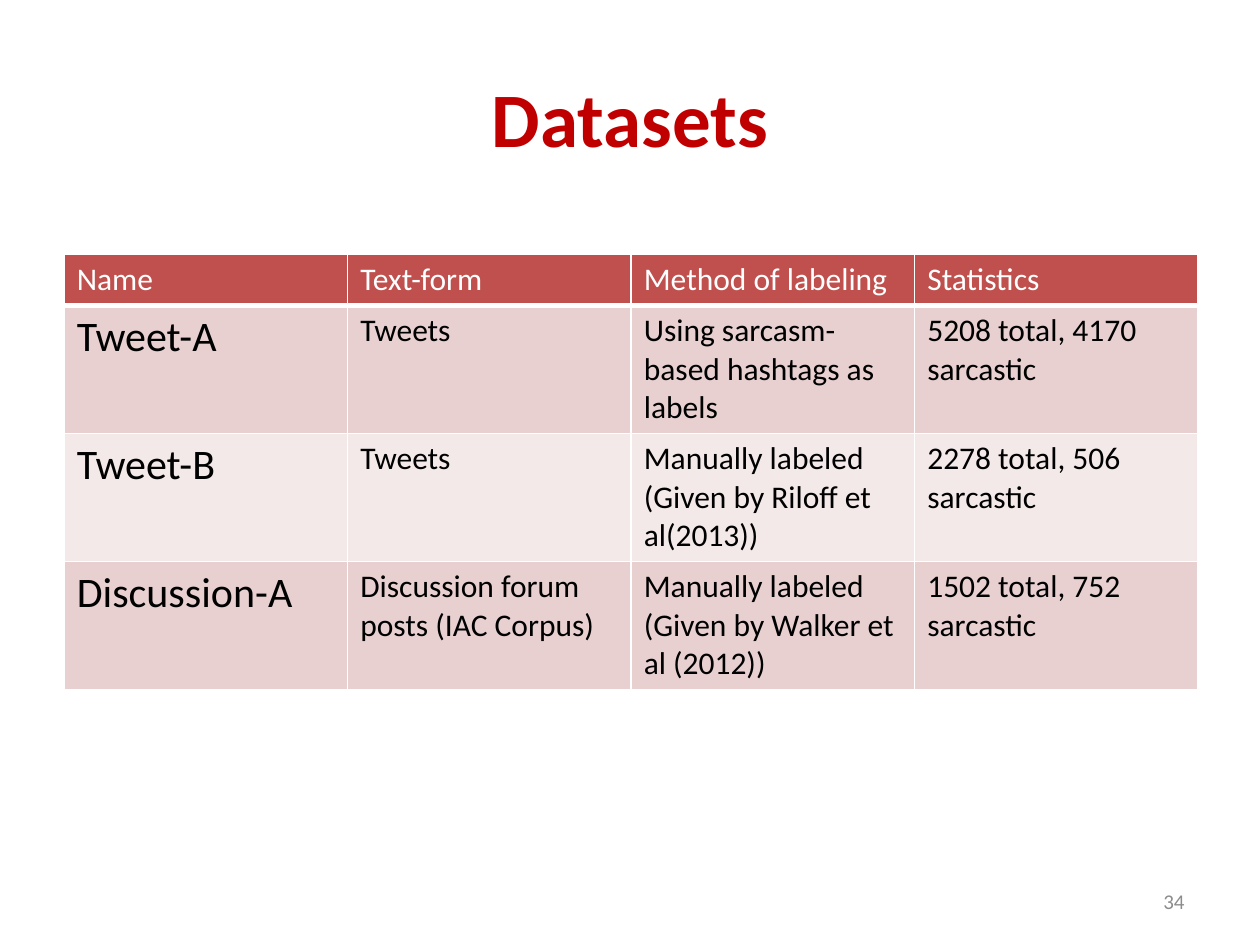
"""Builds the Datasets slide: a title, a table of corpora and the page number."""
from dataclasses import dataclass

from lxml import etree
from pptx import Presentation
from pptx.dml.color import RGBColor
from pptx.enum.text import MSO_ANCHOR, PP_ALIGN
from pptx.oxml.ns import qn
from pptx.util import Pt

LEFT, CENTER, RIGHT = PP_ALIGN.LEFT, PP_ALIGN.CENTER, PP_ALIGN.RIGHT
MIDDLE = MSO_ANCHOR.MIDDLE


@dataclass(frozen=True)
class Theme:
    font: str = "Calibri"
    title: str = "C00000"
    header: str = "C0504D"
    bands: tuple[str, str] = ("E8D0D0", "F4E9E9")
    white: str = "FFFFFF"
    black: str = "000000"
    grey: str = "8C8C8C"
    title_size: float = 44
    name_size: float = 24
    body_size: float = 18
    number_size: float = 12
    border: float = 1
    header_rule: float = 3


@dataclass(frozen=True)
class Box:
    left: float
    top: float
    width: float
    height: float

    def lengths(self) -> list:
        return [Pt(v) for v in (self.left, self.top, self.width, self.height)]


@dataclass(frozen=True)
class Dataset:
    name: str
    form: str
    labeling: str
    statistics: str

    def texts(self) -> tuple[str, ...]:
        return self.name, self.form, self.labeling, self.statistics


THEME = Theme()
HEADINGS = ("Name", "Text-form", "Method of labeling", "Statistics")
DATASETS = (
    Dataset("Tweet-A", "Tweets", "Using sarcasm-based hashtags as labels",
            "5208 total, 4170 sarcastic"),
    Dataset("Tweet-B", "Tweets", "Manually labeled\n(Given by Riloff et al(2013))",
            "2278 total, 506 sarcastic"),
    Dataset("Discussion-A", "Discussion forum posts (IAC Corpus)",
            "Manually labeled\n(Given by Walker et al (2012))",
            "1502 total, 752 sarcastic"),
)
TITLE_BOX = Box(36, 21.6, 648, 90)
TABLE_BOX = Box(36.7, 145.4, 648, 248.6)
NUMBER_BOX = Box(516, 500.4, 168, 28.8)
HEADER_HEIGHT = 29.2


def write(tf, text: str, *, size: float, color: str, bold: bool = False, align=LEFT) -> None:
    tf.word_wrap = True
    for i, line in enumerate(text.split("\n")):
        p = tf.add_paragraph() if i else tf.paragraphs[0]
        p.alignment = align
        r = p.add_run()
        r.text = line
        r.font.name = THEME.font
        r.font.size = Pt(size)
        r.font.bold = bold
        r.font.color.rgb = RGBColor.from_string(color)


def add_text(s, box: Box, text: str, **fmt) -> None:
    tf = s.shapes.add_textbox(*box.lengths()).text_frame
    tf.vertical_anchor = MIDDLE
    write(tf, text, **fmt)


def set_borders(cell, bottom: float) -> None:
    tc_pr = cell._tc.get_or_add_tcPr()
    widths = {"a:lnL": THEME.border, "a:lnR": THEME.border, "a:lnT": THEME.border, "a:lnB": bottom}
    for i, (tag, width) in enumerate(widths.items()):
        ln = etree.Element(qn(tag), w=str(Pt(width)))
        fill = etree.SubElement(ln, qn("a:solidFill"))
        etree.SubElement(fill, qn("a:srgbClr"), val=THEME.white)
        tc_pr.insert(i, ln)


def fill_row(row, texts: tuple[str, ...], *, fill: str, color: str,
             first_size: float, rule: float) -> None:
    for i, (cell, text) in enumerate(zip(row.cells, texts)):
        cell.fill.solid()
        cell.fill.fore_color.rgb = RGBColor.from_string(fill)
        set_borders(cell, rule)
        write(cell.text_frame, text, color=color, size=THEME.body_size if i else first_size)


def add_datasets(s, box: Box) -> None:
    table = s.shapes.add_table(len(DATASETS) + 1, len(HEADINGS), *box.lengths()).table
    for col in table.columns:
        col.width = Pt(box.width / len(HEADINGS))
    header, *body = table.rows
    header.height = Pt(HEADER_HEIGHT)
    fill_row(header, HEADINGS, fill=THEME.header, color=THEME.white,
             first_size=THEME.body_size, rule=THEME.header_rule)
    for i, (row, dataset) in enumerate(zip(body, DATASETS)):
        row.height = Pt((box.height - HEADER_HEIGHT) / len(DATASETS))
        fill_row(row, dataset.texts(), fill=THEME.bands[i % 2], color=THEME.black,
                 first_size=THEME.name_size, rule=THEME.border)


def main() -> None:
    prs = Presentation()
    prs.slide_width, prs.slide_height = Pt(720), Pt(540)
    s = prs.slides.add_slide(prs.slide_layouts[6])
    add_text(s, TITLE_BOX, "Datasets", size=THEME.title_size, color=THEME.title,
             bold=True, align=CENTER)
    add_datasets(s, TABLE_BOX)
    add_text(s, NUMBER_BOX, "34", size=THEME.number_size, color=THEME.grey, align=RIGHT)
    prs.save("out.pptx")


if __name__ == "__main__":
    main()
